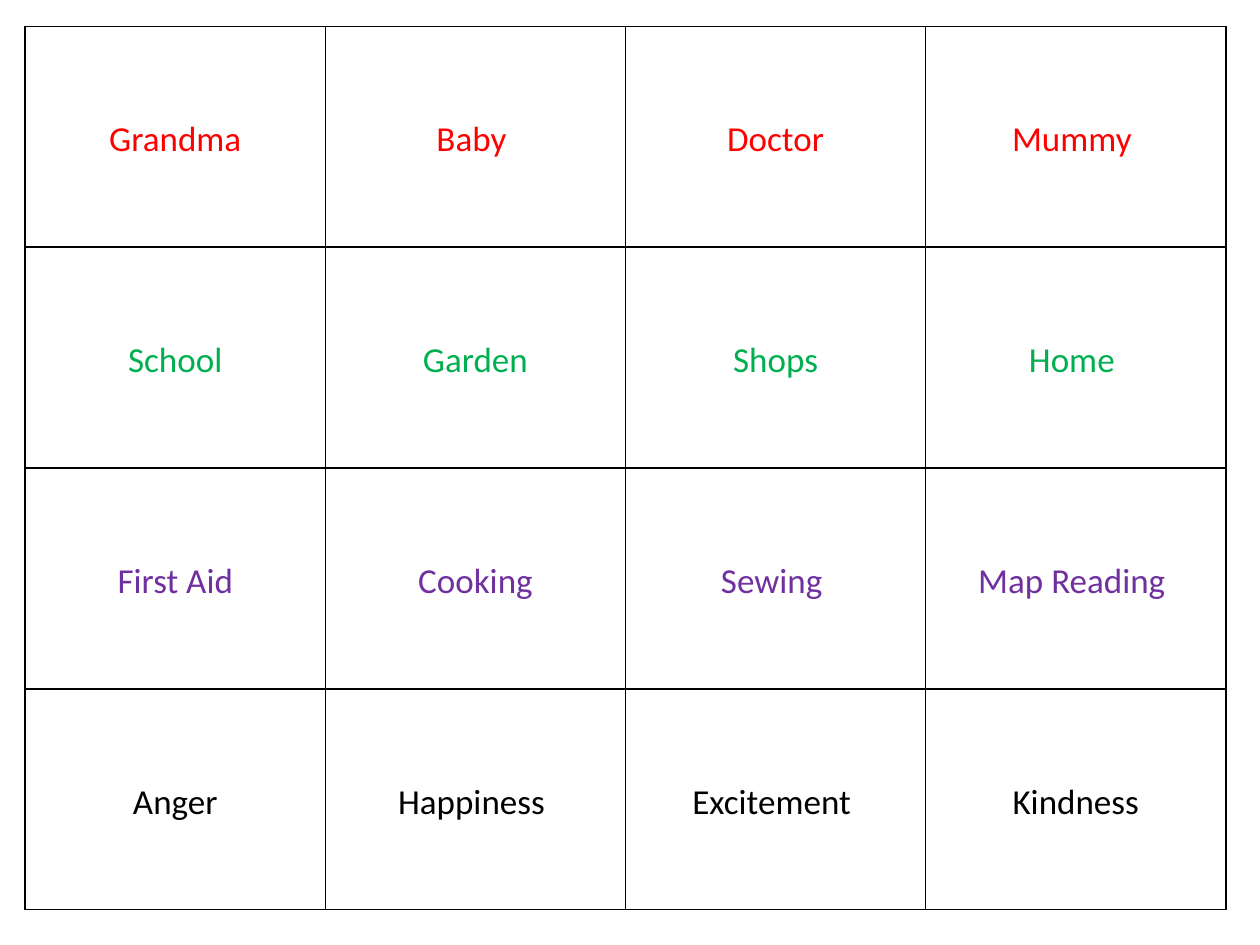
from lxml import etree
from pptx import Presentation
from pptx.dml.color import RGBColor
from pptx.enum.text import MSO_ANCHOR, PP_ALIGN
from pptx.oxml.ns import qn
from pptx.util import Inches, Pt

# Each row of word cards: colour, words
CARD_ROWS = [
    ("FF0000", ["Grandma", "Baby ", "Doctor", "Mummy "]),
    ("00B050", ["School", "Garden", "Shops", "Home "]),
    ("7030A0", ["First Aid", "Cooking", "Sewing ", "Map Reading "]),
    ("000000", ["Anger", "Happiness ", "Excitement ", "Kindness"]),
]


def rgb(value):
    return RGBColor.from_string(value)


def set_borders(cell, color, width):
    tc_pr = cell._tc.get_or_add_tcPr()
    for i, side in enumerate(("lnL", "lnR", "lnT", "lnB")):
        ln = etree.Element(qn(f"a:{side}"), w=str(Pt(width)))
        fill = etree.SubElement(ln, qn("a:solidFill"))
        etree.SubElement(fill, qn("a:srgbClr"), val=color)
        tc_pr.insert(i, ln)  # borders come before the cell fill


def write_card(cell, word, color):
    cell.fill.background()
    set_borders(cell, "000000", 1)
    cell.vertical_anchor = MSO_ANCHOR.TOP
    cell.margin_top = Inches(0.73)
    p = cell.text_frame.paragraphs[0]
    p.alignment = PP_ALIGN.CENTER
    r = p.add_run()
    r.text = word
    r.font.name = "Calibri"
    r.font.size = Pt(20)
    r.font.bold = False
    r.font.color.rgb = rgb(color)


def add_card_grid(slide, left, top, width, height):
    n_rows, n_cols = len(CARD_ROWS), len(CARD_ROWS[0][1])
    table = slide.shapes.add_table(n_rows, n_cols, left, top, width, height).table
    table.first_row = False
    table.horz_banding = False
    for row, (color, words) in enumerate(CARD_ROWS):
        for col, word in enumerate(words):
            write_card(table.cell(row, col), word, color)


def main():
    prs = Presentation()
    prs.slide_width, prs.slide_height = Inches(10), Inches(7.5)
    slide = prs.slides.add_slide(prs.slide_layouts[6])
    add_card_grid(slide, Inches(0.2), Inches(0.21), Inches(9.53), Inches(7.01))
    prs.save("out.pptx")


if __name__ == "__main__":
    main()
